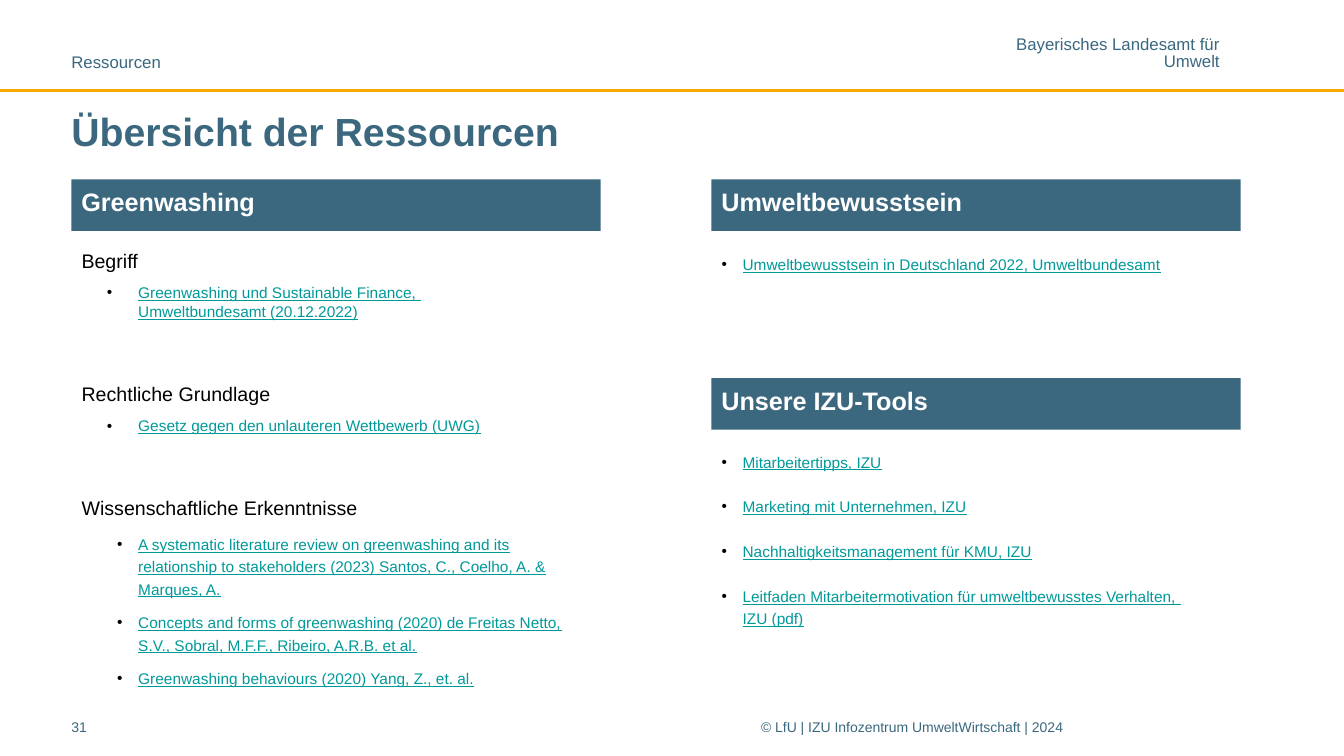
from lxml import etree
from pptx import Presentation
from pptx.dml.color import RGBColor
from pptx.enum.shapes import MSO_CONNECTOR, MSO_SHAPE
from pptx.enum.text import MSO_ANCHOR, MSO_AUTO_SIZE, PP_ALIGN
from pptx.oxml.ns import qn
from pptx.util import Cm, Pt

RECT = MSO_SHAPE.RECTANGLE
LINE = MSO_CONNECTOR.STRAIGHT
TOP, MID, LOW = MSO_ANCHOR.TOP, MSO_ANCHOR.MIDDLE, MSO_ANCHOR.BOTTOM
FIXED = MSO_AUTO_SIZE.NONE
LEFT, RIGHT = PP_ALIGN.LEFT, PP_ALIGN.RIGHT

BLUE = RGBColor(0x3B, 0x68, 0x7F)
GOLD = RGBColor(0xF9, 0xAA, 0x00)
TEAL = RGBColor(0x00, 0x99, 0x99)
BLACK = RGBColor(0, 0, 0)
WHITE = RGBColor(255, 255, 255)

COL_A, COL_B, COL_W = 1.8, 17.93, 13.34
BAND_H = 1.3
BAND_TOP, TOOL_TOP = 4.52, 9.53
FOOT_TOP, FOOT_H = 17.98, 0.79
PAD = 0.254


class Deck:
    face = "Arial"
    head = {"size": Pt(14), "color": BLACK}
    link = {"size": Pt(11), "color": TEAL, "underline": True}
    band_font = {"size": Pt(18), "color": WHITE, "bold": True}

    def __init__(self):
        self.prs = Presentation()
        self.prs.slide_width, self.prs.slide_height = Cm(33.87), Cm(19.05)
        self.slide = self.prs.slides.add_slide(self.prs.slide_layouts[4])
        self.slots = {p.placeholder_format.idx: p for p in self.slide.placeholders}

    def place(self, shape, box):
        for name, value in zip(("left", "top", "width", "height"), box):
            setattr(shape, name, Cm(value))

    def frame(self, shape, anchor=TOP, side=PAD):
        frame = shape.text_frame
        form = {"word_wrap": True, "auto_size": FIXED, "vertical_anchor": anchor,
                "margin_left": Cm(side), "margin_right": Cm(side),
                "margin_top": Cm(0.127), "margin_bottom": Cm(0.127)}
        for name, value in form.items():
            setattr(frame, name, value)
        return frame

    def style(self, para, font, **form):
        base = {"alignment": LEFT, "space_before": Pt(0), "space_after": Pt(0),
                "line_spacing": 1.0}
        for name, value in {**base, **form}.items():
            setattr(para, name, value)
        for name, value in {"name": self.face, "bold": False, **font}.items():
            for run in para.runs:
                if name == "color":
                    run.font.color.rgb = value
                else:
                    setattr(run.font, name, value)

    def bullet(self, para, left, hang):
        props = para._p.get_or_add_pPr()
        props.set("marL", str(Cm(left)))
        props.set("indent", str(-Cm(hang)))
        if not hang:
            etree.SubElement(props, qn("a:buNone"))
            return
        tint = etree.SubElement(props, qn("a:buClr"))
        etree.SubElement(tint, qn("a:srgbClr")).set("val", str(BLACK))
        etree.SubElement(props, qn("a:buFont")).set("typeface", self.face)
        etree.SubElement(props, qn("a:buChar")).set("char", "•")

    def title(self, text, box):
        shape = self.slots[0]
        self.place(shape, box)
        frame = self.frame(shape, MID, 0)
        frame.text = text
        self.style(frame.paragraphs[0], {"size": Pt(28), "color": BLUE, "bold": True})

    def label(self, text, box, size, anchor=TOP, **form):
        shape = self.slide.shapes.add_textbox(*map(Cm, box))
        frame = self.frame(shape, anchor, 0)
        frame.text = text
        for para in frame.paragraphs:
            self.style(para, {"size": Pt(size), "color": BLUE}, **form)
        return frame

    def rule(self, top):
        line = self.slide.shapes.add_connector(
            LINE, 0, Cm(top), self.prs.slide_width, Cm(top))
        line.line.color.rgb, line.line.width = GOLD, Pt(2)
        etree.SubElement(line._element.spPr, qn("a:effectLst"))

    def band(self, text, left, top):
        shape = self.slide.shapes.add_shape(RECT, *map(Cm, (left, top, COL_W, BAND_H)))
        shape.shadow.inherit = False
        shape.fill.solid()
        shape.fill.fore_color.rgb = BLUE
        shape.line.fill.background()
        frame = self.frame(shape, MID)
        frame.text = text
        self.style(frame.paragraphs[0], self.band_font, line_spacing=Pt(16))

    def list(self, slot, box, items):
        shape = self.slots[slot]
        self.place(shape, box)
        frame = self.frame(shape)
        for num, (text, font, left, hang, form) in enumerate(items):
            para = frame.paragraphs[0] if num == 0 else frame.add_paragraph()
            para.text = text
            self.bullet(para, left, hang)
            first = {} if num else {"space_before": Pt(0)}
            self.style(para, font, **{**form, **first})

    def drop(self, slot):
        node = self.slots[slot]._element
        node.getparent().remove(node)


def main():
    deck = Deck()
    deck.rule(2.29)
    deck.label("Bayerisches Landesamt für\nUmwelt", (25.58, 0.81, 5.16, 0.99), 12,
               alignment=RIGHT, line_spacing=0.85)
    deck.label("Ressourcen", (COL_A, 0.61, 20.14, 1.32), 12, LOW, line_spacing=Pt(16))
    deck.title("Übersicht der Ressourcen", (COL_A, 2.59, 30.99, 1.4))

    deck.band("Greenwashing", COL_A, BAND_TOP)
    deck.band("Umweltbewusstsein", COL_B, BAND_TOP)
    deck.band("Unsere IZU-Tools", COL_B, TOOL_TOP)

    tight = {"space_before": Pt(8)}
    fixed = {**tight, "line_spacing": Pt(16)}
    loose = {**fixed, "space_after": Pt(8)}
    part = {"line_spacing": Pt(16), "space_before": Pt(44.65)}
    groups = [
        ("Begriff", 0.79, tight,
         ["Greenwashing und Sustainable Finance, \vUmweltbundesamt (20.12.2022)"]),
        ("Rechtliche Grundlage", 0.79, tight,
         ["Gesetz gegen den unlauteren Wettbewerb (UWG)"]),
        ("Wissenschaftliche Erkenntnisse", 0.53, fixed,
         ["A systematic literature review on greenwashing and its relationship to "
          "stakeholders (2023) Santos, C., Coelho, A. & Marques, A.",
          "Concepts and forms of greenwashing (2020) de Freitas Netto, S.V., "
          "Sobral, M.F.F., Ribeiro, A.R.B. et al.",
          "Greenwashing behaviours (2020) Yang, Z., et. al."]),
    ]
    items = []
    for name, hang, form, links in groups:
        items.append((name, deck.head, 0, 0, part))
        items += [(text, deck.link, 1.43, hang, form) for text in links]
    deck.list(2, (COL_A, 6.17, COL_W, 11.81), items)

    tools = ["Mitarbeitertipps, IZU", "Marketing mit Unternehmen, IZU",
             "Nachhaltigkeitsmanagement für KMU, IZU",
             "Leitfaden Mitarbeitermotivation für umweltbewusstes Verhalten, \vIZU (pdf)"]
    study = ["Umweltbewusstsein in Deutschland 2022, Umweltbundesamt"]
    for slot, top, high, links in ((1, 6.2, 1.91, study), (4, 11.18, 5.97, tools)):
        deck.list(slot, (COL_B, top, COL_W, high),
                  [(text, deck.link, 0.53, 0.53, loose) for text in links])
    deck.drop(3)

    deck.label("31", (COL_A, FOOT_TOP, 1.78, FOOT_H), 10)
    deck.label("© LfU | IZU Infozentrum UmweltWirtschaft | 2024",
               (19.18, FOOT_TOP, 13.61, FOOT_H), 10)
    deck.prs.save("out.pptx")


if __name__ == "__main__":
    main()
